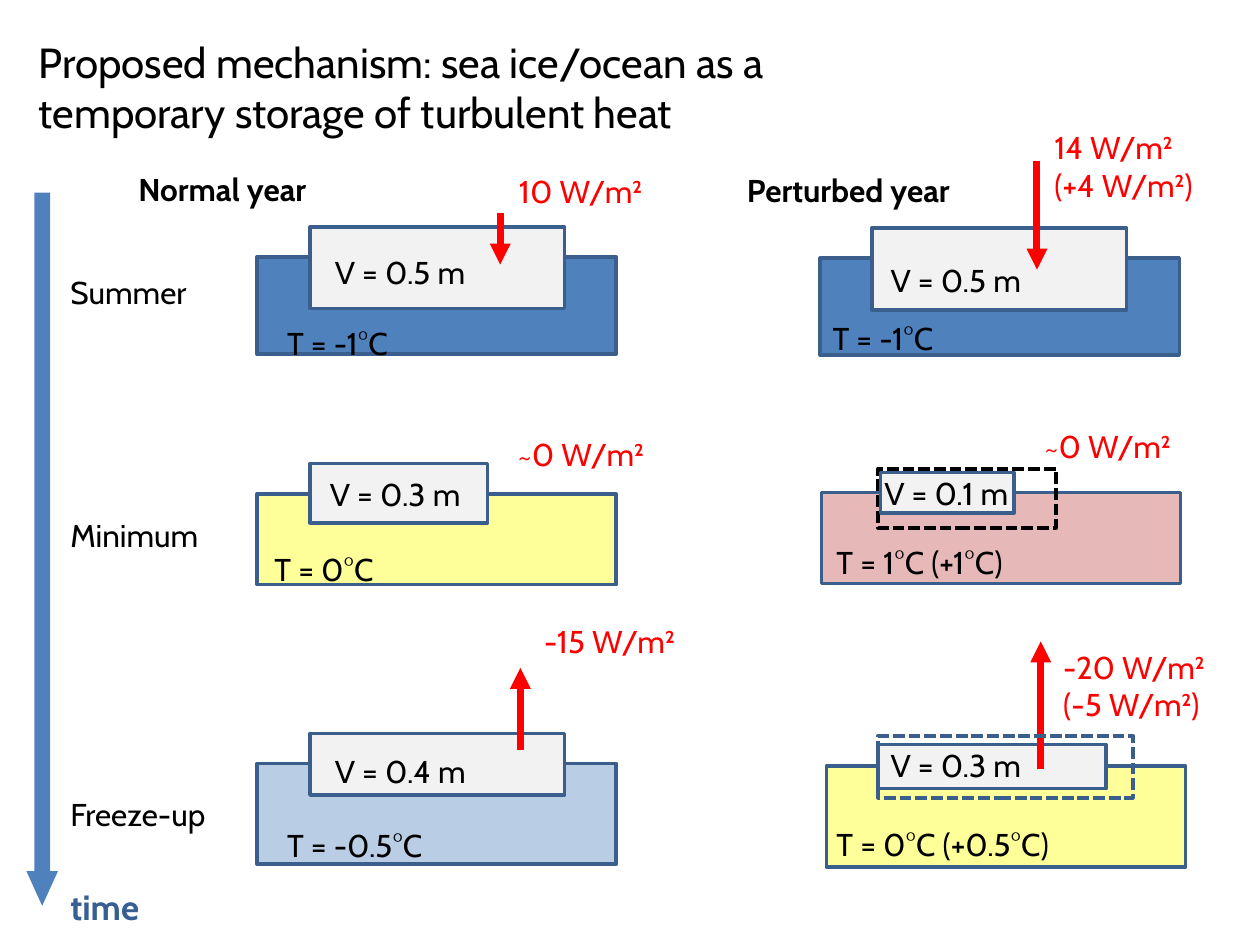
from dataclasses import dataclass

from pptx import Presentation
from pptx.dml.color import RGBColor
from pptx.enum.dml import MSO_LINE
from pptx.enum.shapes import MSO_CONNECTOR, MSO_SHAPE
from pptx.enum.text import MSO_AUTO_SIZE
from pptx.oxml.ns import qn
from pptx.util import Inches, Pt
from lxml.etree import SubElement

FONT = "Cabin"
BLACK = RGBColor(0x00, 0x00, 0x00)
RED = RGBColor(0xFF, 0x00, 0x00)
BLUE = RGBColor(0x4F, 0x81, 0xBD)
OUTLINE = RGBColor(0x3A, 0x5F, 0x8C)
TIME_BLUE = RGBColor(0x37, 0x60, 0x92)
PALE_BLUE = RGBColor(0xB9, 0xCD, 0xE5)
YELLOW = RGBColor(0xFF, 0xFF, 0x99)
PINK = RGBColor(0xE6, 0xB9, 0xB8)
ICE = RGBColor(0xF2, 0xF2, 0xF2)

OCEAN_WIDTH = 2.85


@dataclass
class Stage:
    """One ocean and ice state; part positions are offsets from the ocean box."""
    ocean: tuple
    water: RGBColor
    ice: tuple
    volume: str
    volume_at: tuple
    temperature: str
    temperature_box: tuple
    flux: str
    flux_box: tuple
    flux_arrow: tuple = None
    reference: tuple = None
    reference_color: RGBColor = OUTLINE
    reference_in_front: bool = False


NORMAL_YEAR = [
    Stage((2.04, 2.04, OCEAN_WIDTH, 0.77), BLUE, (0.42, -0.24, 2.02, 0.65),
          "V = 0.5 m", (0.52, -0.08), "T = -1°C", (0.14, 0.48, 1.68, 0.4),
          "10 W/m²", (1.98, -0.72, 1.61, 0.4), flux_arrow=(1.93, -0.35, 0.06)),
    Stage((2.04, 3.92, OCEAN_WIDTH, 0.72), YELLOW, (0.42, -0.24, 1.41, 0.47),
          "V = 0.3 m", (0.48, -0.2), "T = 0°C", (0.04, 0.4, 1.68, 0.4),
          "~0 W/m²", (1.97, -0.52, 1.84, 0.4)),
    Stage((2.04, 6.06, OCEAN_WIDTH, 0.8), PALE_BLUE, (0.42, -0.24, 2.02, 0.49),
          "V = 0.4 m", (0.52, -0.14), "T = -0.5°C", (0.14, 0.45, 1.68, 0.4),
          "-15 W/m²", (2.18, -1.17, 1.33, 0.4), flux_arrow=(2.09, -0.11, -0.76)),
]

PERTURBED_YEAR = [
    Stage((6.51, 2.05, OCEAN_WIDTH, 0.77), BLUE, (0.41, -0.24, 2.02, 0.65),
          "V = 0.5 m", (0.46, -0.03), "T = -1°C", (0, 0.43, 1.68, 0.4),
          "14 W/m² (+4 W/m²)", (1.76, -1.08, 1.43, 0.71), flux_arrow=(1.72, -0.77, 0.09)),
    Stage((6.52, 3.91, OCEAN_WIDTH, 0.72), PINK, (0.47, -0.16, 1.06, 0.32),
          "V = 0.1 m", (0.4, -0.2), "T = 1°C (+1°C)", (0.02, 0.35, 1.68, 0.71),
          "~0 W/m²", (1.67, -0.57, 1.84, 0.4),
          reference=(0.45, -0.19, 1.41, 0.47), reference_color=BLACK),
    Stage((6.56, 6.08, OCEAN_WIDTH, 0.8), YELLOW, (0.41, -0.17, 1.81, 0.35),
          "V = 0.3 m", (0.41, -0.21), "T = 0°C (+0.5°C)", (-0.02, 0.42, 2.04, 0.4),
          "-20 W/m² (-5 W/m²)", (1.78, -0.99, 1.47, 0.71), flux_arrow=(1.7, 0.02, -0.99),
          reference=(0.41, -0.24, 2.02, 0.49), reference_in_front=True),
]


def add_text(slide, text, box, size=18, color=BLACK, bold=False):
    """Place one wrapped paragraph in a text box."""
    label = slide.shapes.add_textbox(*map(Inches, box))
    frame = label.text_frame
    frame.word_wrap = True
    frame.auto_size = MSO_AUTO_SIZE.SHAPE_TO_FIT_TEXT
    run = frame.paragraphs[0].add_run()
    run.text = text
    run.font.name = FONT
    run.font.size = Pt(size)
    run.font.bold = bold
    run.font.color.rgb = color


def add_block(slide, box, fill=None, line=OUTLINE, width=2, dash=None):
    """Draw an outlined rectangle, hollow when no fill is given."""
    block = slide.shapes.add_shape(MSO_SHAPE.RECTANGLE, *map(Inches, box))
    block.shadow.inherit = False
    if fill is None:
        block.fill.background()
    else:
        block.fill.solid()
        block.fill.fore_color.rgb = fill
    block.line.color.rgb = line
    block.line.width = Pt(width)
    if dash is not None:
        block.line.dash_style = dash


def add_flux_arrow(slide, x, start, end):
    """Draw a vertical red heat flux arrow."""
    arrow = slide.shapes.add_connector(
        MSO_CONNECTOR.STRAIGHT, Inches(x), Inches(start), Inches(x), Inches(end))
    arrow.line.color.rgb = RED
    arrow.line.width = Pt(4)
    SubElement(arrow.line._get_or_add_ln(), qn("a:tailEnd"), type="triangle")
    SubElement(arrow._element.spPr, qn("a:effectLst"))


def add_stage(slide, stage):
    """Draw one ocean with its ice, heat flux and labels."""
    left, top = stage.ocean[:2]

    def within(x, y, width, height):
        """Turn an offset box into a slide box."""
        return left + x, top + y, width, height

    def draw_reference():
        """Outline the ice of the normal year."""
        add_block(slide, within(*stage.reference), line=stage.reference_color,
                  width=2.25, dash=MSO_LINE.SQUARE_DOT)

    add_block(slide, stage.ocean, fill=stage.water)
    if stage.reference and not stage.reference_in_front:
        draw_reference()
    add_block(slide, within(*stage.ice), fill=ICE)
    if stage.flux_arrow:
        x, start, end = stage.flux_arrow
        add_flux_arrow(slide, left + x, top + start, top + end)
    if stage.reference and stage.reference_in_front:
        draw_reference()
    add_text(slide, stage.flux, within(*stage.flux_box), color=RED)
    add_text(slide, stage.temperature, within(*stage.temperature_box))
    add_text(slide, stage.volume, within(*stage.volume_at, 1.86, 0.4))


def add_year(slide, name, heading_box, stages):
    """Draw one column of stages under its heading."""
    add_text(slide, name, heading_box, bold=True)
    for stage in stages:
        add_stage(slide, stage)


def add_timeline(slide, box):
    """Draw the downward time arrow with its season labels."""
    left, top, width, height = box
    axis = slide.shapes.add_shape(MSO_SHAPE.DOWN_ARROW, *map(Inches, box))
    axis.shadow.inherit = False
    axis.adjustments[0] = 0.5
    axis.adjustments[1] = 1.1
    axis.fill.solid()
    axis.fill.fore_color.rgb = BLUE
    axis.line.fill.background()
    for season, offset in (("Summer", 0.59), ("Minimum", 2.52), ("Freeze-up", 4.73)):
        add_text(slide, season, (left + width, top + offset, 1.39, 0.4))
    add_text(slide, "time", (left + width, top + height - 0.21, 0.94, 0.44),
             size=20, color=TIME_BLUE, bold=True)


def main():
    """Build and save the slide."""
    deck = Presentation()
    deck.slide_width, deck.slide_height = Inches(10), Inches(7.5)
    slide = deck.slides.add_slide(deck.slide_layouts[6])
    add_year(slide, "Normal year", (1, 1.3, 2.86, 0.4), NORMAL_YEAR)
    add_year(slide, "Perturbed year", (5.83, 1.31, 2.86, 0.4), PERTURBED_YEAR)
    add_timeline(slide, (0.21, 1.53, 0.25, 5.66))
    add_text(slide, "Proposed mechanism: sea ice/ocean as a temporary storage of turbulent heat",
             (0.21, 0.24, 6.13, 0.91), size=24)
    deck.save("out.pptx")


if __name__ == "__main__":
    main()
